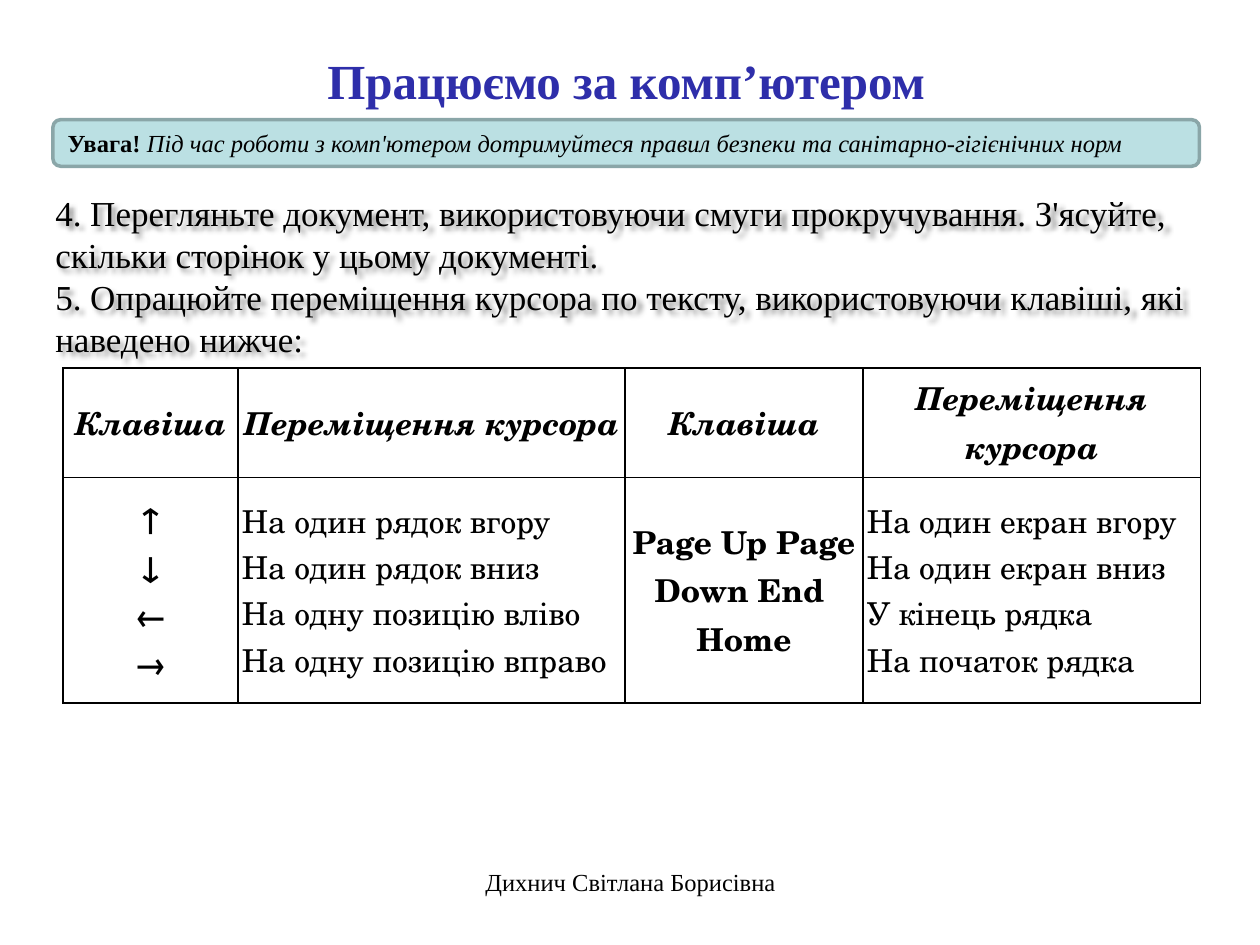
from lxml.etree import SubElement
from pptx import Presentation
from pptx.dml.color import RGBColor
from pptx.enum.shapes import MSO_SHAPE
from pptx.enum.text import MSO_ANCHOR, PP_ALIGN
from pptx.oxml.ns import qn
from pptx.util import Inches, Pt

COLORS = {
    "text": "000000",
    "title": "2E2EAA",
    "notice_fill": "BBE0E3",
    "notice_line": "8AA6A8",
    "border": "000000",
}
BODY_FONT = "Times New Roman"
TABLE_FONT = "TeX Gyre Schola"
COLUMN_WIDTHS = [1.39, 3.07, 1.89, 2.68]
ROW_HEIGHTS = [0.87, 1.79]
HEADERS = ["Клавіша", "Переміщення курсора"] * 2
KEY_CELLS = [
    ["↑", "↓", "←", "→"],
    ["На один рядок вгору", "На один рядок вниз",
     "На одну позицію вліво На одну позицію вправо"],
    ["Page Up Page Down End ", "Home"],
    ["На один екран вгору На один екран вниз У кінець рядка",
     "На початок рядка"],
]


def color(name):
    return RGBColor.from_string(COLORS[name])


def add_span(para, text, size, font=BODY_FONT, fill="text", bold=False, italic=False):
    span = para.add_run()
    span.text = text
    span.font.size = Pt(size)
    span.font.name = font
    span.font.bold = bold
    span.font.italic = italic
    span.font.color.rgb = color(fill)


def fill_paragraphs(frame, lines, size, align=PP_ALIGN.LEFT, **style):
    for index, line in enumerate(lines):
        para = frame.add_paragraph() if index else frame.paragraphs[0]
        para.alignment = align
        add_span(para, line, size, **style)


def add_text(page, position, lines, size, align=PP_ALIGN.LEFT,
             anchor=MSO_ANCHOR.TOP, **style):
    box = page.shapes.add_textbox(*map(Inches, position))
    box.text_frame.word_wrap = True
    box.text_frame.vertical_anchor = anchor
    fill_paragraphs(box.text_frame, lines, size, align, **style)
    return box


def add_soft_shadow(box):
    effects = SubElement(box._element.spPr, qn("a:effectLst"))
    shadow = SubElement(effects, qn("a:outerShdw"), blurRad="38100",
                        dist="38100", dir="2700000", algn="tl")
    tint = SubElement(shadow, qn("a:srgbClr"), val=COLORS["text"])
    SubElement(tint, qn("a:alpha"), val="43000")


def add_notice(page):
    box = page.shapes.add_shape(MSO_SHAPE.ROUNDED_RECTANGLE, Inches(0.42),
                                Inches(0.95), Inches(9.1), Inches(0.37))
    box.shadow.inherit = False
    box.fill.solid()
    box.fill.fore_color.rgb = color("notice_fill")
    box.line.color.rgb = color("notice_line")
    box.line.width = Pt(2)
    frame = box.text_frame
    frame.word_wrap = True
    frame.vertical_anchor = MSO_ANCHOR.TOP
    para = frame.paragraphs[0]
    para.alignment = PP_ALIGN.LEFT
    add_span(para, "Увага! ", 14, bold=True)
    add_span(para, "Під час роботи з комп'ютером дотримуйтеся правил безпеки "
                   "та санітарно-гігієнічних норм", 14, italic=True)


def format_cell(cell):
    properties = cell._tc.get_or_add_tcPr()
    for side in ("a:lnL", "a:lnR", "a:lnT", "a:lnB"):
        line = SubElement(properties, qn(side), w=str(Pt(1)))
        fill = SubElement(line, qn("a:solidFill"))
        SubElement(fill, qn("a:srgbClr"), val=COLORS["border"])
    cell.fill.background()
    cell.vertical_anchor = MSO_ANCHOR.MIDDLE
    cell.margin_left = cell.margin_right = Inches(0.03)
    cell.margin_top = cell.margin_bottom = 0


def add_key_table(page):
    table = page.shapes.add_table(
        len(ROW_HEIGHTS), len(COLUMN_WIDTHS), Inches(0.5), Inches(2.92),
        Inches(sum(COLUMN_WIDTHS)), Inches(sum(ROW_HEIGHTS))).table
    table.first_row = table.horz_banding = False
    for row, height in zip(table.rows, ROW_HEIGHTS):
        row.height = Inches(height)
    for index, width in enumerate(COLUMN_WIDTHS):
        table.columns[index].width = Inches(width)
        header, body = table.cell(0, index), table.cell(1, index)
        format_cell(header)
        format_cell(body)
        fill_paragraphs(header.text_frame, [HEADERS[index]], 18, PP_ALIGN.CENTER,
                        font=TABLE_FONT, bold=True, italic=True)
        # Key names are bold and centred, descriptions are plain
        is_key = index % 2 == 0
        fill_paragraphs(body.text_frame, KEY_CELLS[index], 18,
                        PP_ALIGN.CENTER if is_key else PP_ALIGN.LEFT,
                        font=TABLE_FONT, bold=is_key)


def main():
    deck = Presentation()
    deck.slide_width, deck.slide_height = Inches(10), Inches(7.5)
    page = deck.slides.add_slide(deck.slide_layouts[6])

    # Tasks
    tasks = add_text(page, (0.34, 1.47, 9.35, 1.45), [
        "4. Перегляньте документ, використовуючи смуги прокручування. "
        "З'ясуйте, скільки сторінок у цьому документі.",
        "5. Опрацюйте переміщення курсора по тексту, використовуючи клавіші, "
        "які наведено нижче:"], 20)
    add_soft_shadow(tasks)

    # Safety notice and key table
    add_notice(page)
    add_key_table(page)

    # Title and footer
    add_text(page, (-0.01, 0.32, 9.96, 0.63), ["Працюємо за комп’ютером"], 28,
             PP_ALIGN.CENTER, MSO_ANCHOR.MIDDLE, fill="title", bold=True)
    add_text(page, (3.42, 6.83, 3.17, 0.52), ["Дихнич Світлана Борисівна"], 14,
             PP_ALIGN.CENTER)

    deck.save("out.pptx")


if __name__ == "__main__":
    main()
